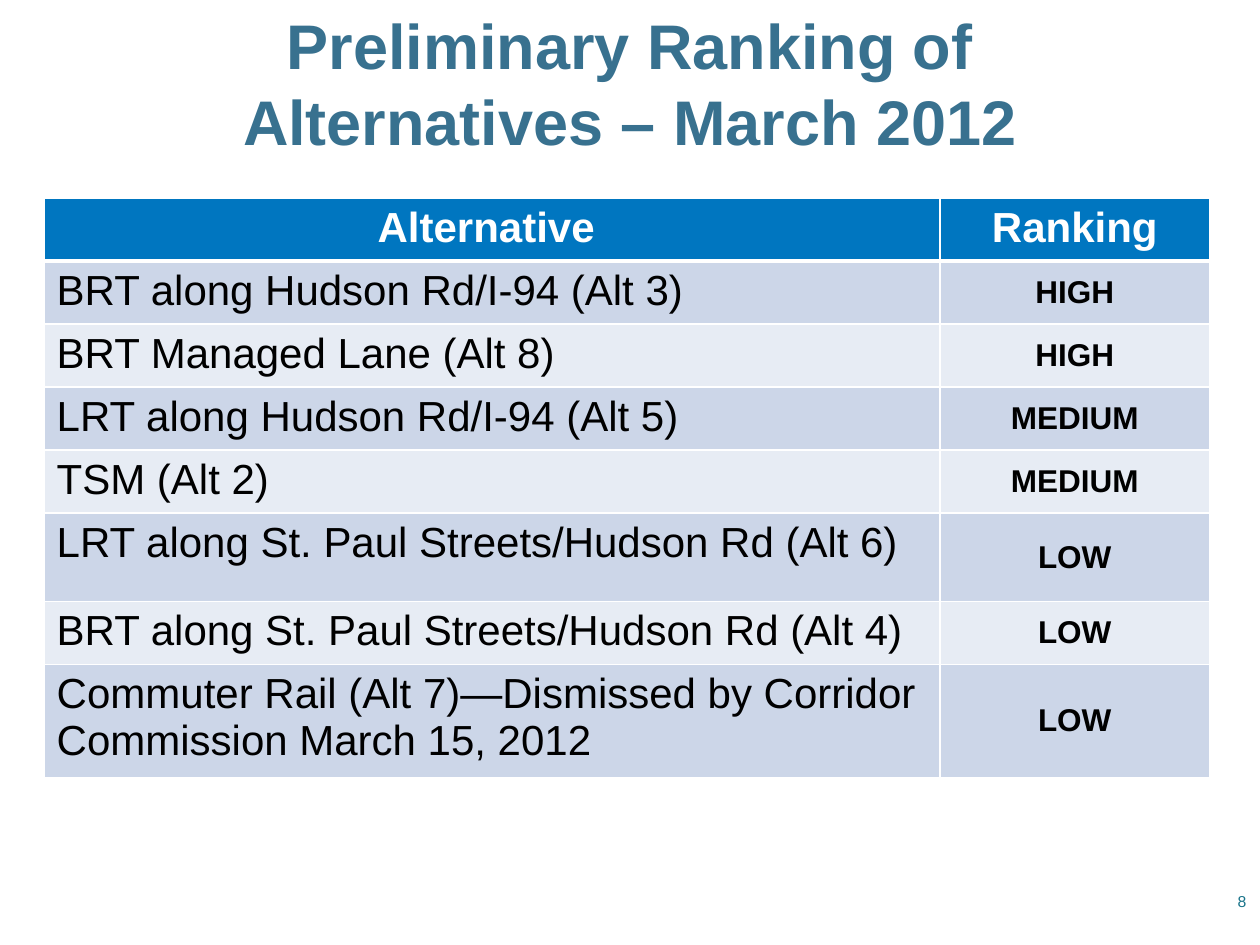
from lxml.etree import SubElement
from pptx import Presentation
from pptx.dml.color import RGBColor
from pptx.enum.text import MSO_ANCHOR as Anchor, PP_ALIGN as Align
from pptx.oxml.ns import qn
from pptx.util import Inches, Pt

WHITE = RGBColor(0xFF, 0xFF, 0xFF)
BLACK = RGBColor(0, 0, 0)
TITLE_BLUE = RGBColor(0x38, 0x71, 0x8F)
NUMBER_TEAL = RGBColor(0x19, 0x74, 0x8A)
HEADER_BLUE = RGBColor(0x00, 0x76, 0xC0)
BANDS = RGBColor(0xCC, 0xD6, 0xE8), RGBColor(0xE7, 0xEC, 0xF4)

HEADINGS = "Alternative ", "Ranking"
RANKINGS = [
    ("BRT along Hudson Rd/I-94 (Alt 3)", "HIGH"),
    ("BRT Managed Lane (Alt 8)", "HIGH"),
    ("LRT along Hudson Rd/I-94 (Alt 5)", "MEDIUM"),
    ("TSM (Alt 2)", "MEDIUM"),
    ("LRT along St. Paul Streets/Hudson Rd (Alt 6)", "LOW"),
    ("BRT along St. Paul Streets/Hudson Rd (Alt 4)", "LOW"),
    ("Commuter Rail (Alt 7)—Dismissed by Corridor Commission March 15, 2012", "LOW"),
]
COLUMN_WIDTHS = 7.11, 2.14
ROW_HEIGHTS = [0.47] + [0.49] * 4 + [0.7, 0.47, 0.84]


def write(frame, text, size, color, align, bold=False):
    """Fill a text frame with one styled paragraph."""
    para = frame.paragraphs[0]
    para.text = text
    para.alignment = align
    font = para.font
    font.name, font.size, font.bold = "Arial", Pt(size), bold
    font.color.rgb = color


def add_label(page, box, margins, *style):
    """Place a vertically centred text box."""
    frame = page.shapes.add_textbox(*map(Inches, box)).text_frame
    frame.word_wrap = True
    frame.vertical_anchor = Anchor.MIDDLE
    (frame.margin_left, frame.margin_top,
     frame.margin_right, frame.margin_bottom) = map(Inches, margins)
    write(frame, *style)


def style_cell(cell, fill, bottom=1, top=1):
    """Give a cell its white borders and its fill."""
    properties = cell._tc.get_or_add_tcPr()
    for side, width in (("L", 1), ("R", 1), ("T", top), ("B", bottom)):
        line = SubElement(properties, qn(f"a:ln{side}"), w=str(Pt(width)))
        solid = SubElement(line, qn("a:solidFill"))
        SubElement(solid, qn("a:srgbClr"), val=str(WHITE))
    cell.fill.solid()
    cell.fill.fore_color.rgb = fill


def add_ranking_table(page, left, top):
    """Place the banded table of ranked alternatives."""
    table = page.shapes.add_table(
        len(ROW_HEIGHTS), len(COLUMN_WIDTHS), Inches(left), Inches(top),
        Inches(sum(COLUMN_WIDTHS)), Inches(sum(ROW_HEIGHTS))).table
    for column, width in zip(table.columns, COLUMN_WIDTHS):
        column.width = Inches(width)
    for row, height in zip(table.rows, ROW_HEIGHTS):
        row.height = Inches(height)
    for cell, heading in zip(table.rows[0].cells, HEADINGS):
        style_cell(cell, HEADER_BLUE, bottom=3)
        write(cell.text_frame, heading, 24, WHITE, Align.CENTER, True)
    for index, (alternative, ranking) in enumerate(RANKINGS):
        name_cell, rank_cell = table.rows[index + 1].cells
        for cell in (name_cell, rank_cell):
            style_cell(cell, BANDS[index % 2], top=1 if index else 3)
        write(name_cell.text_frame, alternative, 24, BLACK, Align.LEFT)
        write(rank_cell.text_frame, ranking, 18, BLACK, Align.CENTER, True)
        rank_cell.vertical_anchor = Anchor.MIDDLE


def main():
    """Build and save the ranking slide."""
    deck = Presentation()
    deck.slide_width, deck.slide_height = Inches(10), Inches(7.5)
    page = deck.slides.add_slide(deck.slide_layouts[6])
    add_label(page, (1.05, 0.03, 7.87, 1.25), (0.05, 0.02, 0.02, 0.02),
              "Preliminary Ranking of Alternatives – March 2012",
              36, TITLE_BLUE, Align.CENTER, True)
    add_ranking_table(page, 0.35, 1.57)
    add_label(page, (9.46, 6.95, 0.53, 0.4), (0.1, 0.05, 0.1, 0.05),
              "8", 9, NUMBER_TEAL, Align.RIGHT)
    deck.save("out.pptx")


if __name__ == "__main__":
    main()
